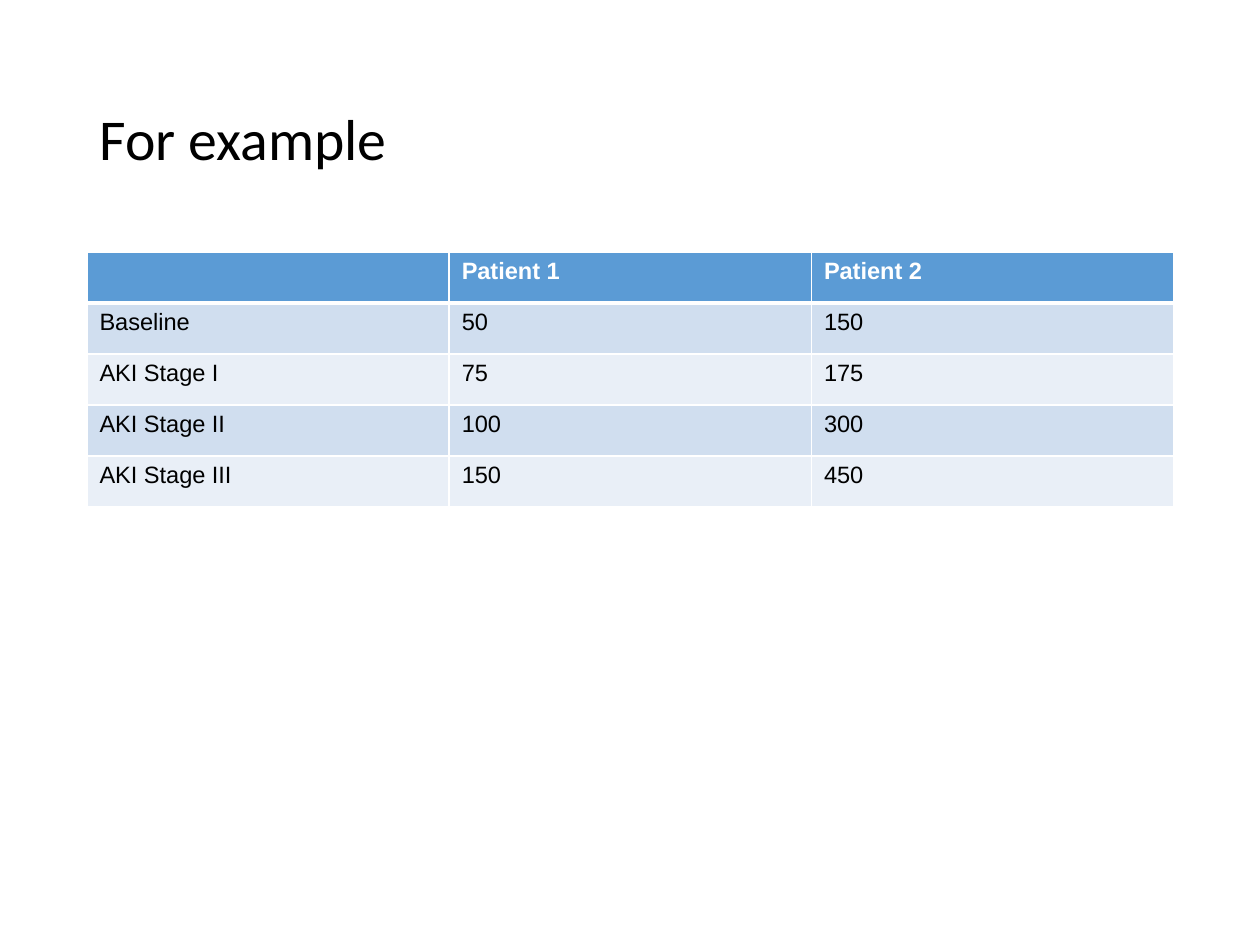
import dataclasses

import lxml.etree
import pptx
import pptx.dml.color
import pptx.enum.text
import pptx.oxml.ns
import pptx.util

WIDE, HIGH = 10, 7.5
LEFT, SPAN = 0.069 * WIDE, 0.8625 * WIDE
ROW = 0.405
WHITE, BLACK, BLUE = "FFFFFF", "000000", "5B9BD5"
BANDS = ("D0DEEF", "E9EFF7")


@dataclasses.dataclass
class Row:
    texts: tuple[str, str, str]
    fill: str
    ink: str = BLACK
    bold: bool = False
    top: float = 1
    base: float = 1


STAGES = (
    ("Baseline", "50", "150"),
    ("AKI Stage I", "75", "175"),
    ("AKI Stage II", "100", "300"),
    ("AKI Stage III", "150", "450"),
)
ROWS = [Row(("", "Patient 1", "Patient 2"), BLUE, WHITE, True, base=3)]
ROWS += [
    Row(texts, BANDS[i % 2], top=1 if i else 3) for i, texts in enumerate(STAGES)
]


def color(code: str) -> pptx.dml.color.RGBColor:
    return pptx.dml.color.RGBColor.from_string(code)


def style(para, ink: str, **form) -> None:
    for run in para.runs:
        for key, value in form.items():
            setattr(run.font, key, value)
        run.font.color.rgb = color(ink)


def border(cell, side: str, width: float) -> None:
    qn = pptx.oxml.ns.qn
    props = cell._tc.get_or_add_tcPr()
    line = lxml.etree.SubElement(props, qn(f"a:ln{side}"), w=str(pptx.util.Pt(width)))
    fill = lxml.etree.SubElement(line, qn("a:solidFill"))
    lxml.etree.SubElement(fill, qn("a:srgbClr"), val=WHITE)


def paint(cell, text: str, row: Row) -> None:
    for side, width in zip("LRTB", (1, 1, row.top, row.base)):
        border(cell, side, width)
    cell.fill.solid()
    cell.fill.fore_color.rgb = color(row.fill)
    cell.text = text
    style(cell.text_frame.paragraphs[0], row.ink, name="Arial",
          size=pptx.util.Pt(13.5), bold=row.bold)


def head(slide, text: str) -> None:
    title = slide.shapes.title
    place = {"left": LEFT, "top": 0.4, "width": SPAN, "height": 1.45}
    for key, value in place.items():
        setattr(title, key, pptx.util.Inches(value))
    frame = title.text_frame
    frame.text = text
    frame.vertical_anchor = pptx.enum.text.MSO_ANCHOR.MIDDLE
    para = frame.paragraphs[0]
    para.alignment = pptx.enum.text.PP_ALIGN.LEFT
    para.line_spacing = 0.9
    style(para, BLACK, name="Calibri", size=pptx.util.Pt(33))


def grid(slide, rows: list[Row]) -> None:
    box = [pptx.util.Inches(x) for x in (LEFT, 2, SPAN, ROW * len(rows))]
    table = slide.shapes.add_table(len(rows), len(rows[0].texts), *box).table
    for r, row in enumerate(rows):
        for c, text in enumerate(row.texts):
            paint(table.cell(r, c), text, row)


def main() -> None:
    deck = pptx.Presentation()
    deck.slide_width = pptx.util.Inches(WIDE)
    deck.slide_height = pptx.util.Inches(HIGH)
    slide = deck.slides.add_slide(deck.slide_layouts[5])
    head(slide, "For example")
    grid(slide, ROWS)
    deck.save("out.pptx")


if __name__ == "__main__":
    main()
